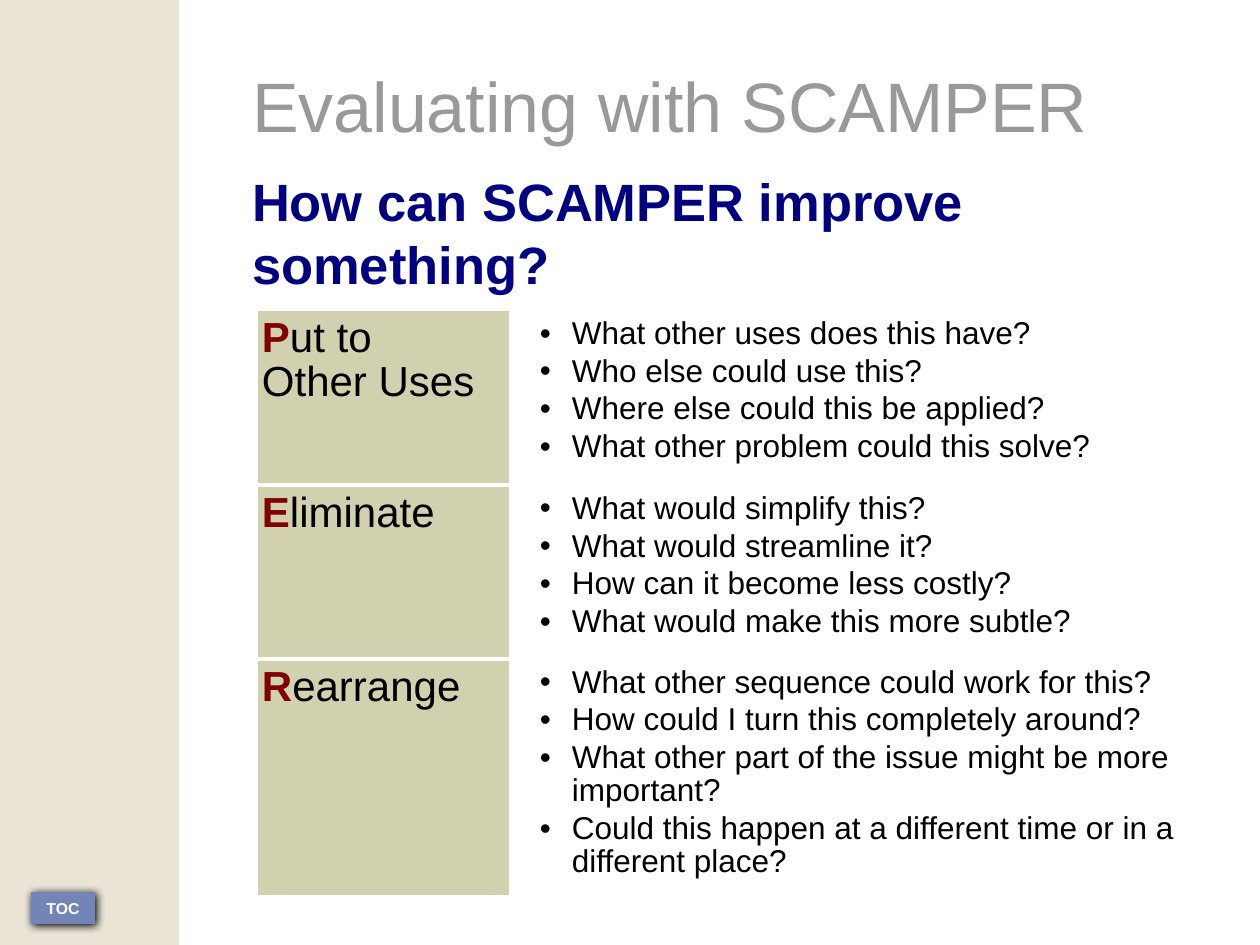
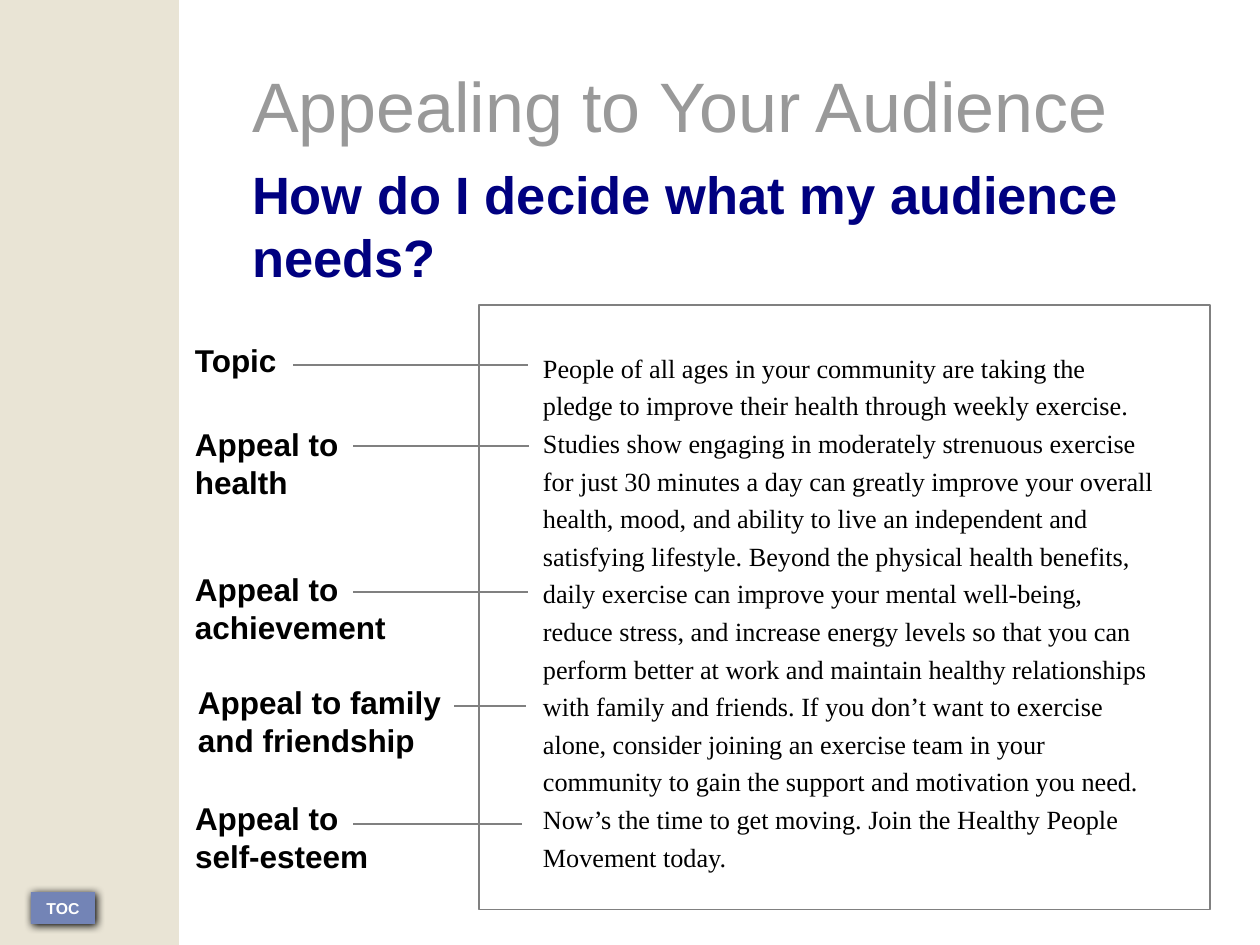
"""Builds two writing-lesson slides: the SCAMPER question table and an annotated appeal."""
from lxml import etree
from pptx import Presentation
from pptx.dml.color import RGBColor
from pptx.enum.shapes import MSO_CONNECTOR, MSO_SHAPE
from pptx.enum.text import MSO_ANCHOR, MSO_AUTO_SIZE, PP_ALIGN
from pptx.oxml.ns import qn
from pptx.util import Emu, Pt

RECTANGLE = MSO_SHAPE.RECTANGLE
STRAIGHT = MSO_CONNECTOR.STRAIGHT
TOP, MIDDLE = MSO_ANCHOR.TOP, MSO_ANCHOR.MIDDLE
LEFT, CENTER = PP_ALIGN.LEFT, PP_ALIGN.CENTER
NO_AUTOFIT = MSO_AUTO_SIZE.NONE

EMU_PER_PX = 914400 / 126
SLIDE_WIDTH, SLIDE_HEIGHT = 1260, 945
SANS, SERIF = "Arial", "Times New Roman"
COLORS = {
    "white": "FFFFFF", "band": "E9E4D5", "button": "7384B6", "title": "999999",
    "question": "000080", "initial": "800000", "text": "000000",
    "label_cell": "D1D1B0", "rule": "808080",
}
HEADING_INSETS = (13, 6, 13, 6)
NOTE_INSETS = (14, 8, 14, 8)
CELL_INSETS = (5, 8, 5, 5)

SCAMPER = {
    "title": "Evaluating with SCAMPER",
    "question": "How can SCAMPER improve something?",
    "question_top": 163,
    "width": 932,
}
SCAMPER_ROWS = [
    (175, ["Put to", "Other Uses"], [
        "What other uses does this have?",
        "Who else could use this?",
        "Where else could this be applied?",
        "What other problem could this solve?",
    ]),
    (174, ["Eliminate"], [
        "What would simplify this?",
        "What would streamline it?",
        "How can it become less costly?",
        "What would make this more subtle?",
    ]),
    (237, ["Rearrange"], [
        "What other sequence could work for this?",
        "How could I turn this completely around?",
        "What other part of the issue might be more important?",
        "Could this happen at a different time or in a different place?",
    ]),
]
SCAMPER_COLUMNS = (253, 713)

AUDIENCE = {
    "title": "Appealing to Your Audience",
    "question": "How do I decide what my audience needs?",
    "question_top": 156,
    "width": 970,
}
APPEAL = (
    "People of all ages in your community are taking the pledge to improve their health "
    "through weekly exercise. Studies show engaging in moderately strenuous exercise for "
    "just 30 minutes a day can greatly improve your overall health, mood, and ability to "
    "live an independent and satisfying lifestyle. Beyond the physical health benefits, "
    "daily exercise can improve your mental well-being, reduce stress, and increase energy "
    "levels so that you can perform better at work and maintain healthy relationships with "
    "family and friends. If you don’t want to exercise alone, consider joining an exercise "
    "team in your community to gain the support and motivation you need. Now’s the time to "
    "get moving. Join the Healthy People Movement today."
)
# label lines, box (left, top, width, height), pointer (from x, to x, y)
APPEAL_NOTES = [
    (["Topic"], (181, 333, 139, 53), (528, 293, 365)),
    (["Appeal to health"], (181, 417, 202, 91), (529, 353, 446)),
    (["Appeal to achievement"], (181, 562, 252, 91), (528, 353, 592)),
    (["Appeal to family and friendship"], (184, 675, 300, 91), (526, 454, 706)),
    (["Appeal to", "self-esteem"], (181, 791, 210, 91), (522, 353, 824)),
]


def px(length):
    return Emu(round(length * EMU_PER_PX))


def box(*lengths):
    return [px(length) for length in lengths]


def color(name):
    return RGBColor.from_string(COLORS[name])


def format_font(font, size, color_name, bold=False, name=SANS):
    font.name, font.size, font.bold = name, Pt(size), bold
    font.color.rgb = color(color_name)


def set_insets(target, insets):
    (target.margin_left, target.margin_top,
     target.margin_right, target.margin_bottom) = box(*insets)


def write(text_frame, lines, size, color_name, bold=False, name=SANS,
          spacing=None, align=LEFT):
    text_frame.text = "\n".join(lines)
    for paragraph in text_frame.paragraphs:
        paragraph.alignment = align
        paragraph.space_before = Pt(0)
        if spacing:
            paragraph.line_spacing = spacing
        for run in paragraph.runs:
            format_font(run.font, size, color_name, bold, name)


def set_bullet(paragraph, character=None, indent=0, hanging=0):
    properties = paragraph._p.get_or_add_pPr()
    properties.set("marL", str(px(indent)))
    properties.set("indent", str(-px(hanging)))
    if character:
        etree.SubElement(properties, qn("a:buFont"), typeface=SANS)
        etree.SubElement(properties, qn("a:buChar"), char=character)
    else:
        etree.SubElement(properties, qn("a:buNone"))


def add_rectangle(slide, place, fill, line=None, line_width=0.71):
    shape = slide.shapes.add_shape(RECTANGLE, *box(*place))
    shape.shadow.inherit = False
    shape.fill.solid()
    shape.fill.fore_color.rgb = color(fill)
    if line:
        shape.line.color.rgb = color(line)
        shape.line.width = Pt(line_width)
    else:
        shape.line.fill.background()
    return shape


def add_toc_button(slide):
    button = add_rectangle(slide, (31, 892, 64, 32), "button")
    effects = button._element.spPr.find(qn("a:effectLst"))
    shadow = etree.SubElement(effects, qn("a:outerShdw"), blurRad=str(Pt(5)),
                              dist=str(Pt(1.4)), dir=str(45 * 60000))
    etree.SubElement(shadow, qn("a:srgbClr"), val=COLORS["text"])
    set_insets(button.text_frame, HEADING_INSETS)
    button.text_frame.vertical_anchor = MIDDLE
    button.text_frame.word_wrap = False
    write(button.text_frame, ["TOC"], 9, "white", bold=True, align=CENTER)


def fill_placeholder(placeholder, place, text, size, color_name, **style):
    placeholder.left, placeholder.top, placeholder.width, placeholder.height = box(*place)
    text_frame = placeholder.text_frame
    set_insets(text_frame, HEADING_INSETS)
    text_frame.word_wrap = True
    text_frame.auto_size = NO_AUTOFIT
    text_frame.vertical_anchor = TOP
    write(text_frame, [text], size, color_name, **style)


def add_base_slide(presentation, heading):
    slide = presentation.slides.add_slide(presentation.slide_layouts[1])
    add_rectangle(slide, (0, 0, 179, SLIDE_HEIGHT), "band")
    add_toc_button(slide)
    title, body = slide.placeholders
    fill_placeholder(title, (239, 56, heading["width"], 100),
                     heading["title"], 40, "title")
    fill_placeholder(body, (239, heading["question_top"], heading["width"], 140),
                     heading["question"], 30, "question", bold=True, spacing=Pt(36))
    set_bullet(body.text_frame.paragraphs[0])
    return slide


def format_cell(cell, fill, edges):
    properties = cell._tc.get_or_add_tcPr()
    for edge in edges:
        line = etree.SubElement(properties, qn(f"a:{edge}"), w=str(Pt(2.27)))
        solid = etree.SubElement(line, qn("a:solidFill"))
        etree.SubElement(solid, qn("a:srgbClr"), val=COLORS["white"])
    cell.fill.solid()
    cell.fill.fore_color.rgb = color(fill)
    cell.vertical_anchor = TOP
    set_insets(cell, CELL_INSETS)


def write_label(cell, lines):
    write(cell.text_frame, lines, 24, "text", spacing=0.93)
    paragraph = cell.text_frame.paragraphs[0]
    initial = paragraph.runs[0]
    initial.text = lines[0][0]
    format_font(initial.font, 24, "initial", bold=True)
    rest = paragraph.add_run()
    rest.text = lines[0][1:]
    format_font(rest.font, 24, "text")


def write_questions(cell, questions):
    write(cell.text_frame, questions, 18, "text", spacing=0.93)
    for paragraph in cell.text_frame.paragraphs:
        paragraph.space_after = Pt(2.9)
        set_bullet(paragraph, "•", indent=57, hanging=32)


def add_scamper_table(slide):
    height = sum(row[0] for row in SCAMPER_ROWS)
    place = box(257, 310, sum(SCAMPER_COLUMNS), height)
    table = slide.shapes.add_table(len(SCAMPER_ROWS), len(SCAMPER_COLUMNS), *place).table
    table.first_row = table.horz_banding = False
    for column, width in zip(table.columns, SCAMPER_COLUMNS):
        column.width = px(width)
    last = len(SCAMPER_ROWS) - 1
    for index, (row_height, label, questions) in enumerate(SCAMPER_ROWS):
        table.rows[index].height = px(row_height)
        edges = ["lnT"] * (index > 0) + ["lnB"] * (index < last)
        label_cell, question_cell = table.rows[index].cells
        format_cell(label_cell, "label_cell", edges)
        format_cell(question_cell, "white", edges)
        write_label(label_cell, label)
        write_questions(question_cell, questions)


def add_text_box(slide, place, lines, size, **style):
    text_frame = slide.shapes.add_textbox(*box(*place)).text_frame
    text_frame.word_wrap = True
    set_insets(text_frame, NOTE_INSETS)
    write(text_frame, lines, size, "text", **style)


def add_pointer(slide, start, end, y):
    connector = slide.shapes.add_connector(STRAIGHT, *box(start, y, end, y))
    connector.line.color.rgb = color("rule")
    connector.line.width = Pt(1.45)
    etree.SubElement(connector._element.spPr, qn("a:effectLst"))


def add_annotated_appeal(slide):
    add_rectangle(slide, (479, 305, 731, 605), "white", line="rule")
    add_text_box(slide, (529, 338, 643, 544), [APPEAL], 15, name=SERIF, spacing=Pt(21.5))
    for lines, place, pointer in APPEAL_NOTES:
        add_text_box(slide, place, lines, 18, bold=True, spacing=Pt(21.6))
        add_pointer(slide, *pointer)


def main():
    presentation = Presentation()
    presentation.slide_width, presentation.slide_height = box(SLIDE_WIDTH, SLIDE_HEIGHT)
    add_scamper_table(add_base_slide(presentation, SCAMPER))
    add_annotated_appeal(add_base_slide(presentation, AUDIENCE))
    presentation.save("out.pptx")


if __name__ == "__main__":
    main()
